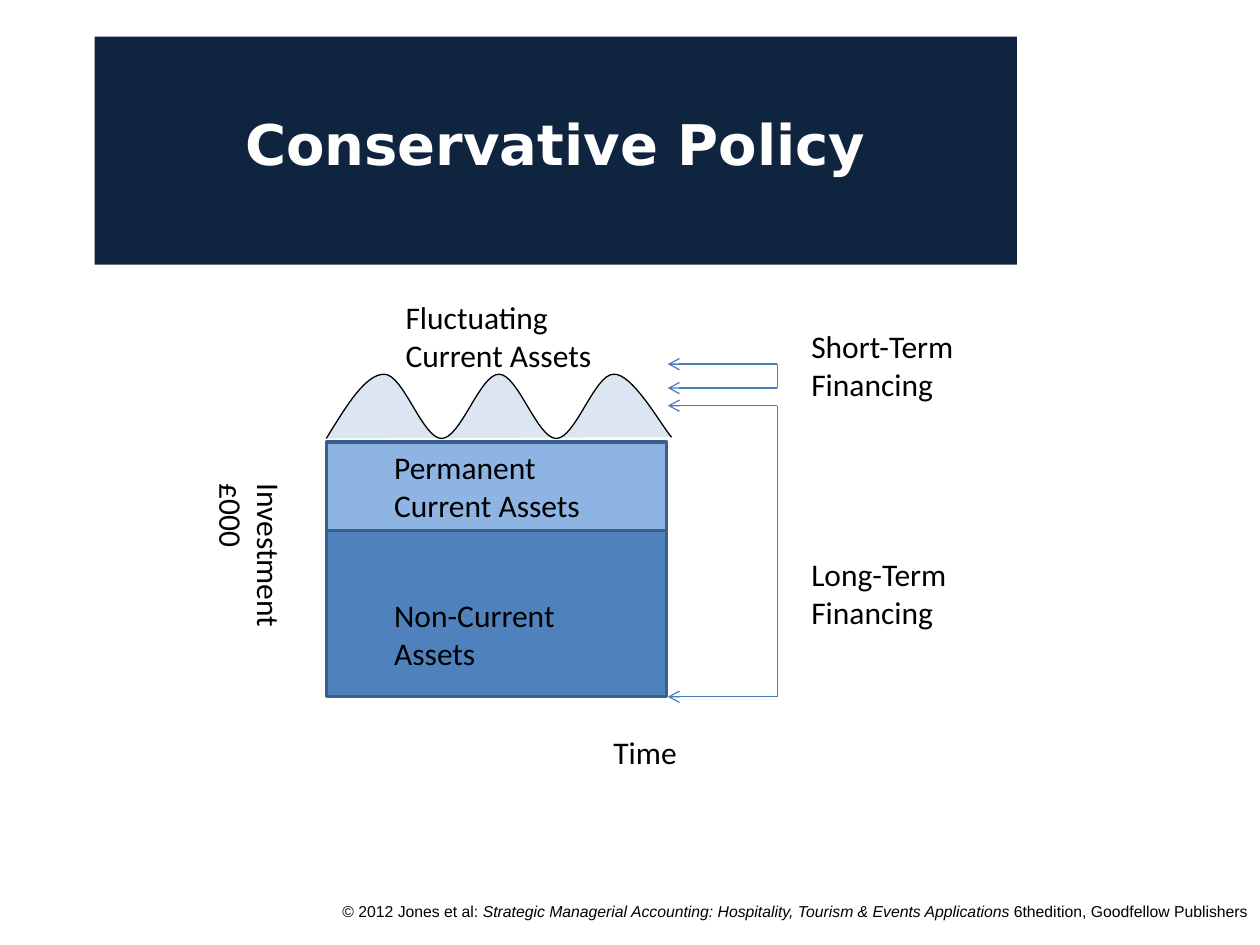
from lxml.etree import SubElement
from pptx import Presentation
from pptx.dml.color import RGBColor
from pptx.enum.shapes import MSO_CONNECTOR, MSO_SHAPE
from pptx.enum.text import MSO_ANCHOR, MSO_AUTO_SIZE, PP_ALIGN
from pptx.oxml.ns import qn
from pptx.util import Inches, Pt

# Content: text, left, top, width, height, text direction
LABELS = [
    ("Time", 4.77, 5.77, 1.13, 0.38, "horz"),
    ("Investment £000", 1.8, 3.74, 0.54, 1.79, "vert"),
    ("Non-Current Assets", 3.03, 4.68, 1.92, 0.66, "horz"),
    ("Permanent Current Assets", 3.03, 3.51, 1.92, 0.66, "horz"),
    ("Fluctuating Current Assets", 3.12, 2.32, 2.01, 0.66, "horz"),
    ("Long-Term Financing", 6.34, 4.36, 2.09, 0.66, "horz"),
    ("Short-Term Financing", 6.34, 2.55, 1.92, 0.66, "horz"),
]
CREDIT = [
    ("© 2012 Jones et al: ", False),
    ("Strategic Managerial Accounting: Hospitality, Tourism & Events Applications ", True),
    ("6thedition, Goodfellow Publishers", False),
]
# Asset blocks: top, height, fill
BLOCK_LEFT, BLOCK_W = 2.59, 2.7
BLOCKS = [(4.21, 1.32, "4F81BD"), (3.51, 0.7, "8EB4E3")]
# Financing brackets: top, bottom
ARROW_X, BRACKET_X = 5.3, 6.17
BRACKETS = [(3.22, 5.53), (2.89, 3.08)]
# Wave: start point, then two control points and an end point per curve
CREST, TROUGH, HALF = 2.97, 3.48, 0.455
WAVE_START = (BLOCK_LEFT, TROUGH)
FIRST_CREST = 3.05
STEPS = 16


def rgb(value):
    return RGBColor.from_string(value)


def style(sp, fill, line, width):
    sp.shadow.inherit = False
    sp.fill.solid()
    sp.fill.fore_color.rgb = rgb(fill)
    sp.line.color.rgb = rgb(line)
    sp.line.width = Pt(width)


def add_run(p, text, font, size, color="000000", bold=False, italic=False):
    r = p.add_run()
    r.text = text
    r.font.name, r.font.size = font, Pt(size)
    r.font.bold, r.font.italic = bold, italic
    r.font.color.rgb = rgb(color)


def add_box(s, left, top, width, height):
    tf = s.shapes.add_textbox(*map(Inches, (left, top, width, height))).text_frame
    tf.word_wrap = True
    return tf


def add_line(s, x1, y1, x2, y2, arrow=False):
    line = s.shapes.add_connector(MSO_CONNECTOR.STRAIGHT, *map(Inches, (x1, y1, x2, y2)))
    line.line.color.rgb = rgb("4B7EBC")
    line.line.width = Pt(0.75)
    if arrow:
        SubElement(line.line._get_or_add_ln(), qn("a:tailEnd"), type="arrow")
    SubElement(line._element.spPr, qn("a:effectLst"))


def bezier(p0, p1, p2, p3):
    for i in range(1, STEPS + 1):
        t = i / STEPS
        u = 1 - t
        yield tuple(u**3 * a + 3 * u * u * t * b + 3 * u * t * t * c + t**3 * d
                    for a, b, c, d in zip(p0, p1, p2, p3))


def wave_points():
    curves = [((2.75, 3.22), (2.9, CREST), (FIRST_CREST, CREST))]
    for i in range(4):
        x = FIRST_CREST + i * HALF
        y1, y2 = (CREST, TROUGH) if i % 2 == 0 else (TROUGH, CREST)
        curves.append(((x + HALF / 3, y1), (x + HALF * 2 / 3, y2), (x + HALF, y2)))
    curves.append(((5.02, 2.96), (5.25, 3.38), (5.33, 3.47)))
    points, start = [WAVE_START], WAVE_START
    for curve in curves:
        points.extend(bezier(start, *curve))
        start = curve[-1]
    return [(Inches(x), Inches(y)) for x, y in points]


prs = Presentation()
prs.slide_width, prs.slide_height = Inches(10), Inches(7.5)
s = prs.slides.add_slide(prs.slide_layouts[5])

# Title band
title = s.shapes.title
title.left, title.top, title.width, title.height = map(Inches, (0.75, 0.29, 7.32, 1.81))
title.fill.solid()
title.fill.fore_color.rgb = rgb("0F243E")
tf = title.text_frame
tf.auto_size = MSO_AUTO_SIZE.NONE
tf.vertical_anchor = MSO_ANCHOR.MIDDLE
tf.margin_bottom = Inches(0.17)
p = tf.paragraphs[0]
p.alignment = PP_ALIGN.CENTER
add_run(p, "Conservative Policy", "DejaVu Sans", 32, "FFFFFF", bold=True)

# Credit line
p = add_box(s, 2.23, 7.11, 7.77, 0.39).paragraphs[0]
p.alignment = PP_ALIGN.RIGHT
for text, italic in CREDIT:
    add_run(p, text, "Arial", 9, italic=italic)

# Asset blocks
for top, height, fill in BLOCKS:
    block = s.shapes.add_shape(MSO_SHAPE.RECTANGLE,
                               *map(Inches, (BLOCK_LEFT, top, BLOCK_W, height)))
    style(block, fill, "3A5F8C", 2)

# Fluctuating assets wave
start, *rest = wave_points()
builder = s.shapes.build_freeform(*start)
builder.add_line_segments(rest, close=False)
style(builder.convert_to_shape(), "DCE6F2", "000000", 0.75)

# Financing brackets
for top, bottom in BRACKETS:
    for y in (bottom, top):
        add_line(s, BRACKET_X, y, ARROW_X, y, arrow=True)
    add_line(s, BRACKET_X, top, BRACKET_X, bottom)

# Labels
for text, left, top, width, height, direction in LABELS:
    tf = add_box(s, left, top, width, height)
    tf.auto_size = MSO_AUTO_SIZE.SHAPE_TO_FIT_TEXT
    tf._txBody.bodyPr.set("vert", direction)
    add_run(tf.paragraphs[0], text, "Calibri", 18)

prs.save("out.pptx")
